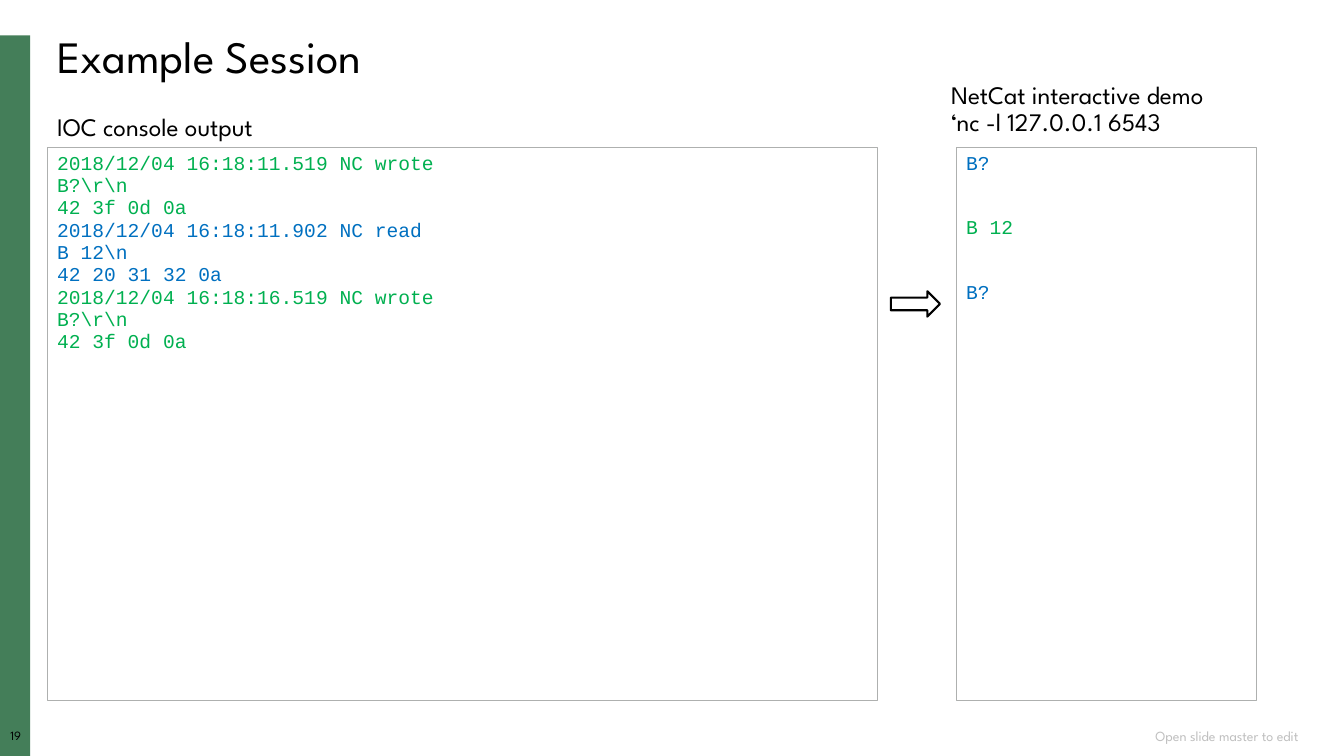
"""Build the Example Session slide: console log beside an interactive client."""
from dataclasses import dataclass

from pptx import Presentation
from pptx.dml.color import RGBColor
from pptx.enum.shapes import MSO_SHAPE
from pptx.enum.text import MSO_ANCHOR, MSO_AUTO_SIZE, PP_ALIGN
from pptx.util import Cm, Pt


@dataclass(frozen=True)
class Theme:
    sans: str = "League Spartan"
    mono: str = "Courier New"
    black: str = "000000"
    strip: str = "447E59"
    border: str = "AEB0AF"
    muted: str = "BFBFBF"
    wrote: str = "00B050"
    read: str = "0070C0"
    title_size: int = 32
    label_size: int = 18
    code_size: int = 14
    footer_size: int = 10
    number_size: int = 9
    spacing: float = 0.9
    code_spacing: float = 0.95


THEME = Theme()

TITLE = "Example Session"
CONSOLE_LABEL = ["IOC console output"]
CLIENT_LABEL = ["NetCat interactive demo", "‘nc -l 127.0.0.1 6543"]
CONSOLE_LOG = [
    (THEME.wrote, ["2018/12/04 16:18:11.519 NC wrote", r"B?\r\n", "42 3f 0d 0a"]),
    (THEME.read, ["2018/12/04 16:18:11.902 NC read", r"B 12\n", "42 20 31 32 0a"]),
    (THEME.wrote, ["2018/12/04 16:18:16.519 NC wrote", r"B?\r\n", "42 3f 0d 0a"]),
]
CLIENT_LOG = [(THEME.read, ["B?"]), (THEME.wrote, ["B 12"]), (THEME.read, ["B?"])]
SLIDE_NUMBER = "19"
FOOTER = "Open slide master to edit"

SLIDE_SIZE = Cm(33.87), Cm(19.05)
LEFT = Cm(1.19)
PANEL_TOP, PANEL_HEIGHT = Cm(3.71), Cm(13.94)
CONSOLE_WIDTH = Cm(20.93)
CLIENT_LEFT, CLIENT_WIDTH = Cm(24.1), Cm(7.57)
CLIENT_GAP = Pt(30.2)


def write(frame, lines, size, font=THEME.sans, spacing=THEME.spacing,
          align=PP_ALIGN.LEFT, anchor=MSO_ANCHOR.TOP, gap=None):
    """Fill a text frame with (text, colour) lines."""
    frame.word_wrap = True
    frame.auto_size = MSO_AUTO_SIZE.NONE
    frame.vertical_anchor = anchor
    for index, (text, colour) in enumerate(lines):
        paragraph = frame.add_paragraph() if index else frame.paragraphs[0]
        paragraph.text = text
        paragraph.alignment = align
        paragraph.line_spacing = spacing
        if index and gap:
            paragraph.space_before = gap
        paragraph.font.name = font
        paragraph.font.size = Pt(size)
        paragraph.font.color.rgb = RGBColor.from_string(colour)


def add_outline(slide, preset, box, fill=None, line=None, weight=0.75):
    """Add a flat shape with an optional fill and line."""
    shape = slide.shapes.add_shape(preset, *box)
    shape.shadow.inherit = False
    if fill:
        shape.fill.solid()
        shape.fill.fore_color.rgb = RGBColor.from_string(fill)
    else:
        shape.fill.background()
    if line:
        shape.line.color.rgb = RGBColor.from_string(line)
        shape.line.width = Pt(weight)
    else:
        shape.line.fill.background()
    return shape


def add_panel(slide, left, width, log, gap=None):
    """Add a bordered panel of coloured session lines."""
    panel = add_outline(slide, MSO_SHAPE.RECTANGLE,
                        (left, PANEL_TOP, width, PANEL_HEIGHT), line=THEME.border)
    lines = [(text, colour) for colour, block in log for text in block]
    write(panel.text_frame, lines, THEME.code_size, THEME.mono,
          THEME.code_spacing, gap=gap)


def add_label(slide, box, texts):
    """Add a panel heading."""
    label = slide.shapes.add_textbox(*box)
    write(label.text_frame, [(text, THEME.black) for text in texts], THEME.label_size)


def main():
    """Assemble and save the slide."""
    deck = Presentation()
    deck.slide_width, deck.slide_height = SLIDE_SIZE
    slide = deck.slides.add_slide(deck.slide_layouts[5])

    title = slide.shapes.title
    title.left, title.top, title.width, title.height = LEFT, Cm(0.76), Cm(31.75), Cm(1.5)
    write(title.text_frame, [(TITLE, THEME.black)], THEME.title_size)

    add_outline(slide, MSO_SHAPE.RECTANGLE, (0, Cm(0.89), Cm(0.76), Cm(18.16)),
                fill=THEME.strip)
    number = slide.shapes.add_textbox(0, Cm(18.39), Cm(0.79), Cm(0.43)).text_frame
    number.margin_left = number.margin_right = number.margin_top = number.margin_bottom = 0
    write(number, [(SLIDE_NUMBER, THEME.black)], THEME.number_size,
          align=PP_ALIGN.CENTER)
    footer = slide.shapes.add_textbox(Cm(22.25), Cm(18.29), Cm(10.72), Cm(0.51))
    write(footer.text_frame, [(FOOTER, THEME.muted)], THEME.footer_size, spacing=1.0,
          align=PP_ALIGN.RIGHT, anchor=MSO_ANCHOR.MIDDLE)

    add_panel(slide, CLIENT_LEFT, CLIENT_WIDTH, CLIENT_LOG, CLIENT_GAP)
    add_panel(slide, LEFT, CONSOLE_WIDTH, CONSOLE_LOG)
    add_label(slide, (LEFT, Cm(2.77), Cm(6.6), Cm(0.94)), CONSOLE_LABEL)
    add_label(slide, (Cm(23.72), Cm(1.96), Cm(8.36), Cm(1.65)), CLIENT_LABEL)
    add_outline(slide, MSO_SHAPE.RIGHT_ARROW, (Cm(22.45), Cm(7.34), Cm(1.24), Cm(0.64)),
                line=THEME.black, weight=1.5)
    deck.save("out.pptx")


if __name__ == "__main__":
    main()
